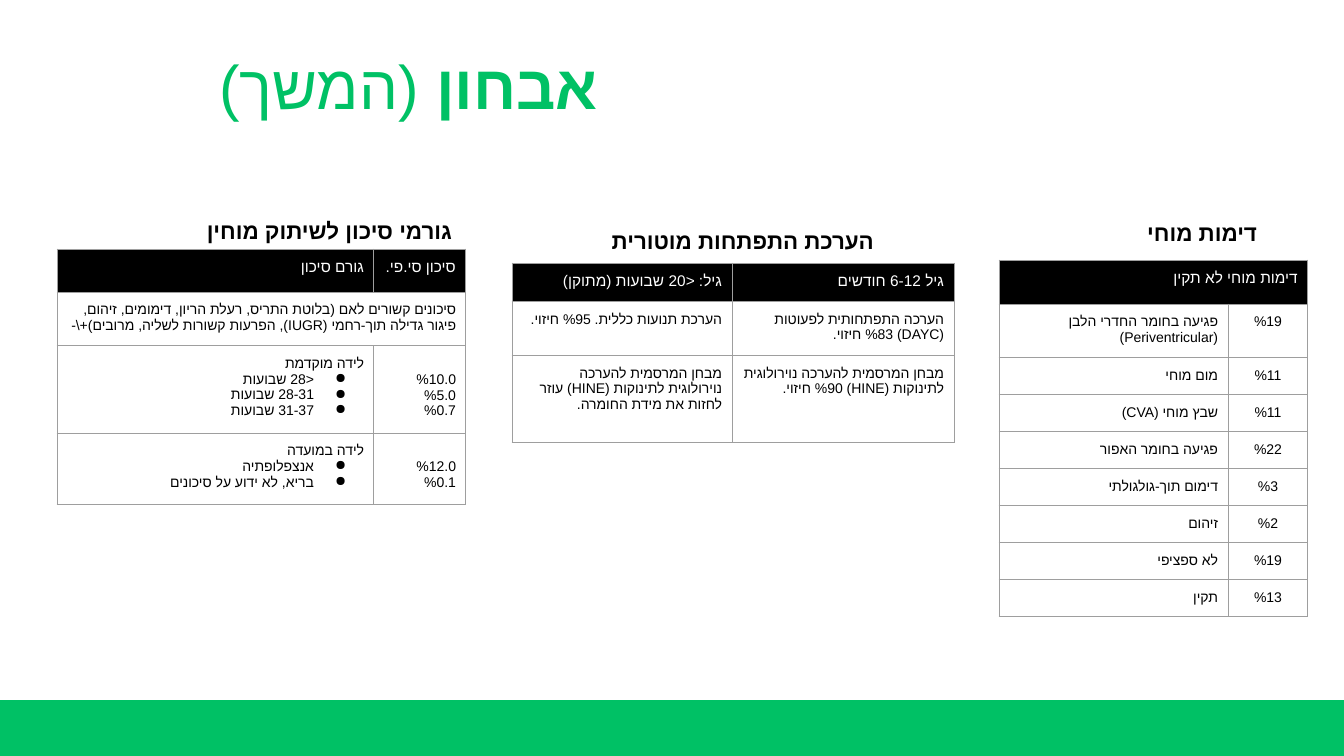
from lxml import etree
from pptx import Presentation
from pptx.dml.color import RGBColor
from pptx.enum.shapes import MSO_SHAPE
from pptx.enum.text import MSO_ANCHOR, PP_ALIGN
from pptx.oxml.ns import qn
from pptx.util import Emu, Pt

GREEN = RGBColor(0x00, 0xC1, 0x65)
BLACK = RGBColor(0x00, 0x00, 0x00)
WHITE = RGBColor(0xFF, 0xFF, 0xFF)
GRID = RGBColor(0x9E, 0x9E, 0x9E)
RECTANGLE = MSO_SHAPE.RECTANGLE
RIGHT, CENTER = PP_ALIGN.RIGHT, PP_ALIGN.CENTER
TOP, MIDDLE = MSO_ANCHOR.TOP, MSO_ANCHOR.MIDDLE
FONT = "Arial"
BULLET = "●"
SLIDE_W, SLIDE_H = 1344, 756
CELL_INSET = 10
LINE_H = 16


def px(length):
    return Emu(round(length * 914400 / 100.8))


def add_xml(parent, tag, **attributes):
    return etree.SubElement(parent, qn(tag), attributes)


class HebrewSlide:
    def __init__(self, slide):
        self.shapes = slide.shapes

    def style_paragraph(self, paragraph, size, color, bold=False, align=RIGHT):
        paragraph.alignment = align
        paragraph._p.get_or_add_pPr().set("rtl", "1")
        for run in paragraph.runs:
            font = run.font
            font.size, font.bold, font.name = Pt(size), bold, FONT
            font.color.rgb = color
            add_xml(run._r.get_or_add_rPr(), "a:cs", typeface=FONT)

    def bullet(self, paragraph):
        props = paragraph._p.get_or_add_pPr()
        props.set("marL", str(px(50)))
        props.set("indent", str(-px(32)))
        add_xml(add_xml(props, "a:buClr"), "a:srgbClr", val=str(BLACK))
        add_xml(props, "a:buChar", char=BULLET)

    def band(self, x, y, w, h):
        band = self.shapes.add_shape(RECTANGLE, px(x), px(y), px(w), px(h))
        band.shadow.inherit = False
        band.fill.solid()
        band.fill.fore_color.rgb = GREEN
        band.line.fill.background()

    def text(self, x, y, w, h, words, size, color, anchor=TOP):
        frame = self.shapes.add_textbox(px(x), px(y), px(w), px(h)).text_frame
        frame.word_wrap = True
        frame.vertical_anchor = anchor
        paragraph = frame.paragraphs[0]
        paragraph.text = words
        self.style_paragraph(paragraph, size, color, bold=True)
        return paragraph

    def borders(self, cell):
        props = cell._tc.get_or_add_tcPr()
        for side in ("a:lnL", "a:lnR", "a:lnT", "a:lnB"):
            line = add_xml(props, side, w=str(Pt(0.75)))
            add_xml(add_xml(line, "a:solidFill"), "a:srgbClr", val=str(GRID))

    def cell(self, cell, words, header, align):
        cell.margin_left = cell.margin_right = px(CELL_INSET)
        cell.margin_top = cell.margin_bottom = px(CELL_INSET)
        cell.text_frame.text = words.replace(BULLET, "")
        for paragraph, line in zip(cell.text_frame.paragraphs, words.split("\n")):
            if line.startswith(BULLET):
                self.bullet(paragraph)
            self.style_paragraph(paragraph, 11 if header else 10,
                                 WHITE if header else BLACK, align=align)

    def table(self, x, y, widths, heights, rows, last_align=RIGHT):
        """A row with a single text spans every column."""
        table = self.shapes.add_table(len(rows), len(widths), px(x), px(y),
                                      px(sum(widths)), px(sum(heights))).table
        table.first_row = table.horz_banding = False
        for column, width in zip(table.columns, widths):
            column.width = px(width)
        for r, (height, texts) in enumerate(zip(heights, rows)):
            table.rows[r].height = px(height)
            header = r == 0
            for c in range(len(widths)):
                cell = table.cell(r, c)
                self.borders(cell)
                if header:
                    cell.fill.solid()
                    cell.fill.fore_color.rgb = BLACK
                else:
                    cell.fill.background()
            if len(texts) == 1:
                table.cell(r, 0).merge(table.cell(r, len(widths) - 1))
            for c, words in enumerate(texts):
                self.cell(table.cell(r, c), words, header,
                          last_align if c else RIGHT)
        return table


def main():
    deck = Presentation()
    deck.slide_width, deck.slide_height = px(SLIDE_W), px(SLIDE_H)
    page = HebrewSlide(deck.slides.add_slide(deck.slide_layouts[6]))

    # Footer band and title
    page.band(0, 700, SLIDE_W, 56)
    title = page.text(57, 50, 551, 79, "אבחון ", 44, GREEN, MIDDLE)
    title.line_spacing = 0.9
    continued = title.add_run()
    continued.text = "(המשך)"
    page.style_paragraph(title, 44, GREEN, bold=True)
    continued.font.bold = False

    # Section headings
    for x, y, w, heading in (
        (60, 212, 402, "גורמי סיכון לשיתוק מוחין"),
        (518, 222, 366, "הערכת התפתחות מוטורית"),
        (999, 214, 268, "דימות מוחי"),
    ):
        page.text(x, y, w, 37, heading, 16, BLACK)

    # Risk factors
    risks = page.table(57, 249, (317, 92), (43, 54, 87, 71), (
        ("גורם סיכון", "סיכון סי.פי."),
        ("סיכונים קשורים לאם (בלוטת התריס, רעלת הריון, דימומים, זיהום, "
         r"פיגור גדילה תוך-רחמי (IUGR), הפרעות קשורות לשליה, מרובים)+\-",),
        ("לידה מוקדמת\n●<28 שבועות\n●28-31 שבועות\n●31-37 שבועות",
         "%10.0\n%5.0\n%0.7"),
        ("לידה במועדה\n●אנצפלופתיה\n●בריא, לא ידוע על סיכונים",
         "%12.0\n%0.1"),
    ))
    # Percentages start level with the first bullet
    for r in (2, 3):
        risks.cell(r, 1).margin_top = px(CELL_INSET + LINE_H)

    # Motor development
    page.table(512, 263, (220, 222), (38, 54, 87), (
        ("גיל: <20 שבועות (מתוקן)", "גיל 6-12 חודשים"),
        ("הערכת תנועות כללית. %95 חיזוי.",
         "הערכה התפתחותית לפעוטות (DAYC) %83 חיזוי."),
        ("מבחן המרסמית להערכה נוירולוגית לתינוקות (HINE) עוזר לחזות את מידת החומרה.",
         "מבחן המרסמית להערכה נוירולוגית לתינוקות (HINE) %90 חיזוי."),
    ))

    # Brain imaging
    findings = (
        ("פגיעה בחומר החדרי הלבן (Periventricular)", "%19"),
        ("מום מוחי", "%11"),
        ("שבץ מוחי (CVA)", "%11"),
        ("פגיעה בחומר האפור", "%22"),
        ("דימום תוך-גולגולתי", "%3"),
        ("זיהום", "%2"),
        ("לא ספציפי", "%19"),
        ("תקין", "%13"),
    )
    page.table(999, 260, (229, 80), (44, 53) + (37,) * 7,
               (("דימות מוחי לא תקין",),) + findings, CENTER)

    deck.save("out.pptx")


if __name__ == "__main__":
    main()
